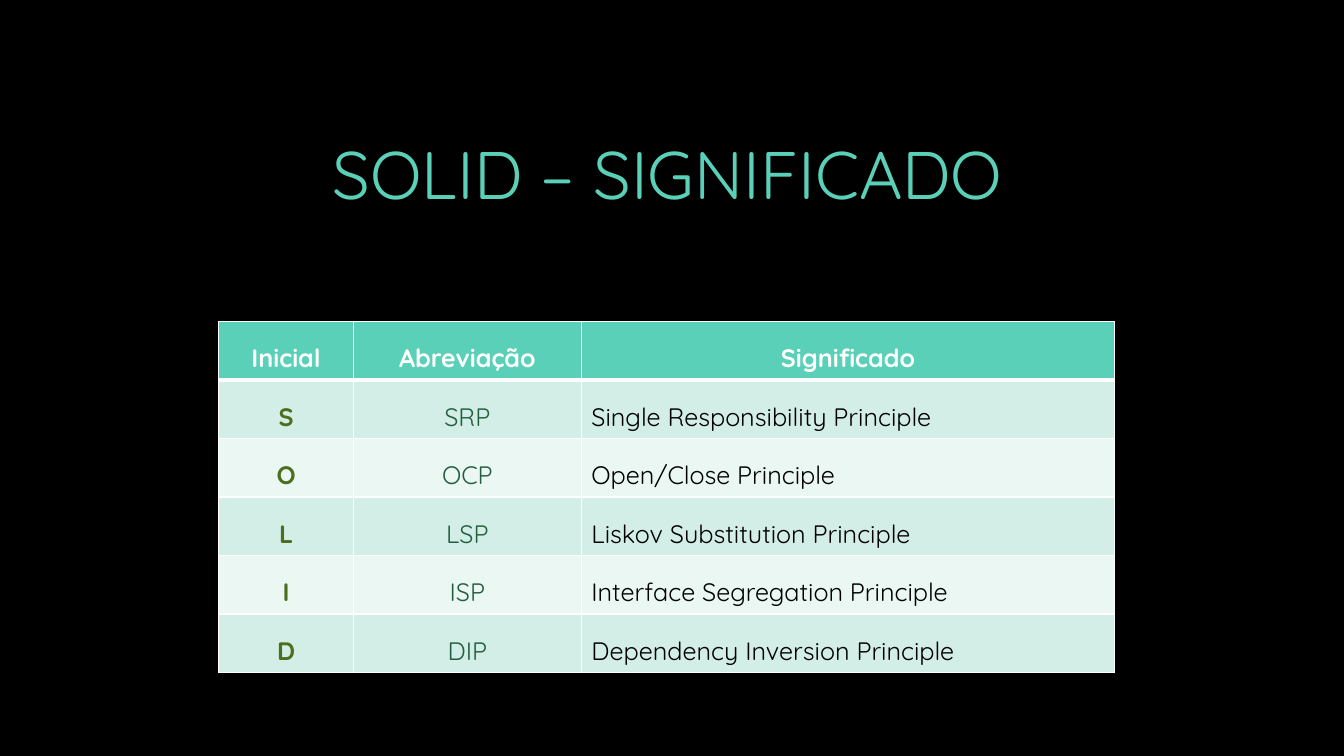
from lxml import etree
from pptx import Presentation
from pptx.dml.color import RGBColor
from pptx.enum.text import MSO_ANCHOR, PP_ALIGN
from pptx.oxml.ns import qn
from pptx.util import Pt

CENTER, LEFT = PP_ALIGN.CENTER, PP_ALIGN.LEFT
MIDDLE = MSO_ANCHOR.MIDDLE
TITLE_ONLY = 5

FONT = "Quicksand"
COLORS = {
    "background": "000000",
    "accent": "5AD0B8",
    "white": "FFFFFF",
    "band_dark": "D2EEE6",
    "band_light": "EAF7F3",
    "initial": "4C6E1E",
    "abbreviation": "235E3F",
    "meaning": "000000",
}

HEADER = ("Inicial", "Abreviação", "Significado")
PRINCIPLES = [
    ("S", "SRP", "Single Responsibility Principle"),
    ("O", "OCP", "Open/Close Principle"),
    ("L", "LSP", "Liskov Substitution Principle"),
    ("I", "ISP", "Interface Segregation Principle"),
    ("D", "DIP", "Dependency Inversion Principle"),
]
COLUMN_WIDTHS = (96.25, 162.75, 381)
ROW_HEIGHT = 41.8

# Text formats: the header, then one for each body column
HEADER_FORMAT = {"color": "white", "bold": True, "align": CENTER}
COLUMN_FORMATS = (
    {"color": "initial", "bold": True, "align": CENTER},
    {"color": "abbreviation", "bold": False, "align": CENTER},
    {"color": "meaning", "bold": False, "align": LEFT},
)


def rgb(name):
    return RGBColor.from_string(COLORS[name])


def write_text(tf, text, size, color, align, bold=False, line_spacing=1.0):
    p = tf.paragraphs[0]
    p.alignment = align
    p.line_spacing = line_spacing
    r = p.add_run()
    r.text = text
    for name, value in {"name": FONT, "size": Pt(size), "bold": bold}.items():
        setattr(r.font, name, value)
    r.font.color.rgb = rgb(color)


def set_borders(cell, widths):
    """Draw white cell borders; widths maps each side to points."""
    tc_pr = cell._tc.get_or_add_tcPr()
    for i, (side, width) in enumerate(widths.items()):
        ln = etree.Element(qn("a:ln" + side), w=str(Pt(width)))
        fill = etree.SubElement(ln, qn("a:solidFill"))
        etree.SubElement(fill, qn("a:srgbClr"), val=COLORS["white"])
        tc_pr.insert(i, ln)


def add_title(slide, text):
    sp = slide.shapes.title
    box = {"left": 44, "top": 48, "width": 865.5, "height": 150}
    for name, value in box.items():
        setattr(sp, name, Pt(value))
    tf = sp.text_frame
    tf.vertical_anchor = MIDDLE
    write_text(tf, text, 48, "accent", CENTER)


def add_principles_table(slide, left, top):
    rows = [HEADER, *PRINCIPLES]
    table = slide.shapes.add_table(
        len(rows), len(HEADER), Pt(left), Pt(top),
        Pt(sum(COLUMN_WIDTHS)), Pt(ROW_HEIGHT * len(rows))).table
    for column, width in zip(table.columns, COLUMN_WIDTHS):
        column.width = Pt(width)

    for i, values in enumerate(rows):
        table.rows[i].height = Pt(ROW_HEIGHT)
        if i == 0:
            fill = "accent"
        else:
            fill = "band_dark" if i % 2 else "band_light"
        # A thick rule parts the header from the body
        borders = {"L": 1, "R": 1, "T": 3 if i == 1 else 1,
                   "B": 3 if i == 0 else 1}
        for j, text in enumerate(values):
            cell = table.cell(i, j)
            cell.fill.solid()
            cell.fill.fore_color.rgb = rgb(fill)
            set_borders(cell, borders)
            text_format = HEADER_FORMAT if i == 0 else COLUMN_FORMATS[j]
            write_text(cell.text_frame, text, 18, line_spacing=1.5,
                       **text_format)


def main():
    prs = Presentation()
    prs.slide_width, prs.slide_height = Pt(960), Pt(540)
    slide = prs.slides.add_slide(prs.slide_layouts[TITLE_ONLY])

    # Background
    slide.background.fill.solid()
    slide.background.fill.fore_color.rgb = rgb("background")

    # Title and table
    add_title(slide, "SOLID – SIGNIFICADO")
    add_principles_table(slide, 156.25, 229.7)

    prs.save("out.pptx")


if __name__ == "__main__":
    main()
